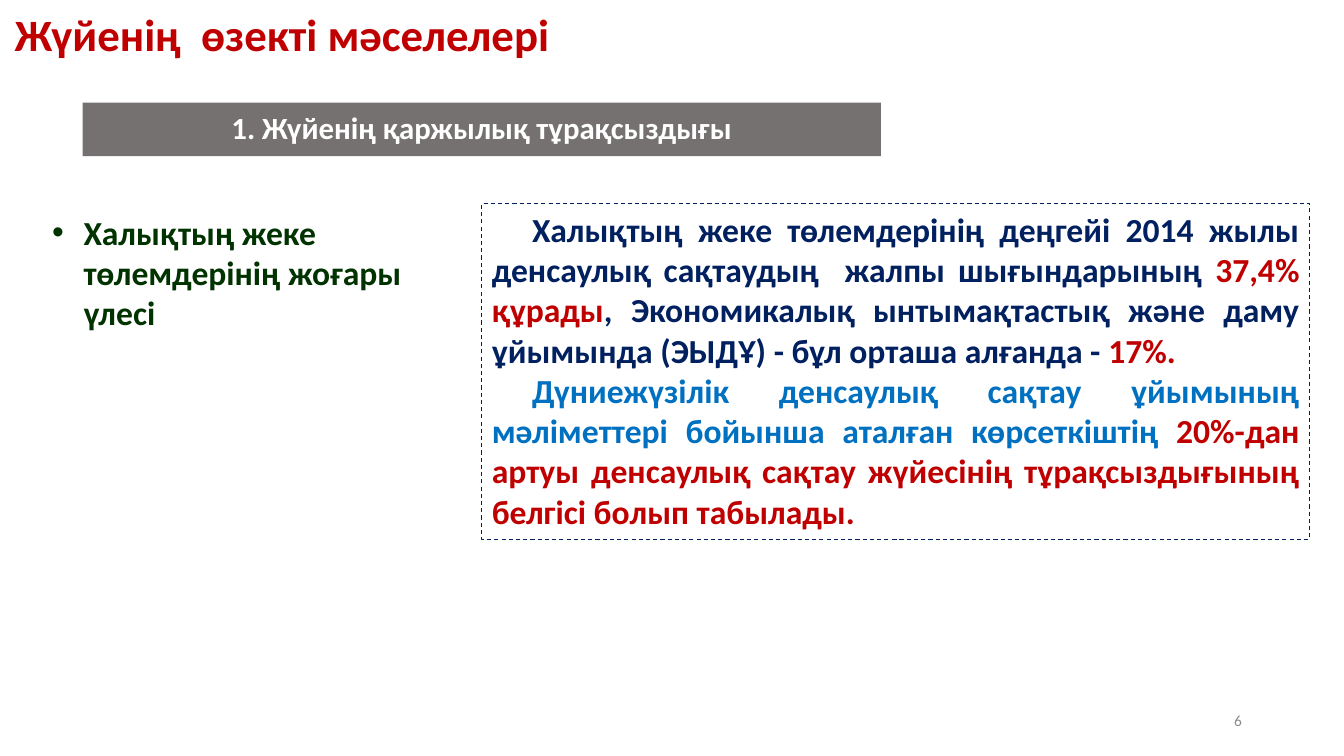
from lxml import etree
from pptx import Presentation
from pptx.dml.color import RGBColor
from pptx.enum import dml, shapes, text
from pptx.oxml.ns import qn
from pptx.util import Pt

RED, NAVY, BLUE, GREEN = "C00000", "002060", "0070C0", "003300"
WHITE, GREY, PALE_GREY = "FFFFFF", "767171", "8C8C8C"
ALIGN, ANCHOR = text.PP_ALIGN, text.MSO_ANCHOR


def rgb(value):
    return RGBColor.from_string(value)


def write(sp, paragraphs, size, bold=True, frame=None, para=None, margin=0, indent=0):
    """Fill a shape with paragraphs, each a list of (text, colour) runs."""
    tf = sp.text_frame
    tf.word_wrap = True
    for name, value in (frame or {}).items():
        setattr(tf, name, value)
    for i, runs in enumerate(paragraphs):
        p = tf.paragraphs[0] if i == 0 else tf.add_paragraph()
        for name, value in (para or {}).items():
            setattr(p, name, value)
        pPr = p._p.get_or_add_pPr()
        pPr.set("marL", str(Pt(margin)))
        pPr.set("indent", str(Pt(indent)))
        for words, colour in runs:
            r = p.add_run()
            r.text = words
            for name, value in {"name": "Calibri", "size": Pt(size), "bold": bold}.items():
                setattr(r.font, name, value)
            r.font.color.rgb = rgb(colour)


prs = Presentation()
prs.slide_width, prs.slide_height = Pt(960), Pt(540)
s = prs.slides.add_slide(prs.slide_layouts[6])

# Bulleted issue on the left
issue = s.shapes.add_textbox(Pt(30.2), Pt(147.6), Pt(297.4), Pt(94.3))
write(issue, [[("Халықтың жеке төлемдерінің жоғары үлесі", GREEN)]], 24,
      margin=22.5, indent=-22.5)
pPr = issue.text_frame.paragraphs[0]._p.pPr
etree.SubElement(pPr, qn("a:buFont")).set("typeface", "Arial")
etree.SubElement(pPr, qn("a:buChar")).set("char", "•")

# Dashed box with the figures
figures = s.shapes.add_shape(shapes.MSO_SHAPE.RECTANGLE,
                             Pt(344.2), Pt(145.4), Pt(591.1), Pt(239.8))
figures.shadow.inherit = False
figures.fill.background()
figures.line.color.rgb = rgb(NAVY)
figures.line.width = Pt(0.75)
figures.line.dash_style = dml.MSO_LINE.DASH
write(figures, [
    [("Халықтың жеке төлемдерінің деңгейі 2014 жылы денсаулық сақтаудың  жалпы шығындарының ", NAVY),
     ("37,4% құрады", RED),
     (", Экономикалық ынтымақтастық және даму ұйымында (ЭЫДҰ) - бұл орташа алғанда - ", NAVY),
     ("17%. ", RED)],
    [("Дүниежүзілік денсаулық сақтау ұйымының мәліметтері бойынша аталған көрсеткіштің", BLUE),
     (" 20%-дан артуы денсаулық сақтау жүйесінің тұрақсыздығының белгісі болып табылады.", RED)],
], 24, frame={"vertical_anchor": ANCHOR.TOP}, para={"alignment": ALIGN.JUSTIFY}, indent=28.8)

# Section banner
banner = s.shapes.add_shape(shapes.MSO_SHAPE.RECTANGLE, Pt(59), Pt(73.4), Pt(570.2), Pt(38.2))
banner.shadow.inherit = False
banner.fill.solid()
banner.fill.fore_color.rgb = rgb(GREY)
banner.line.fill.background()
write(banner, [[("1. Жүйенің қаржылық тұрақсыздығы", WHITE)]], 22,
      frame={"vertical_anchor": ANCHOR.MIDDLE, "margin_left": Pt(21), "margin_right": Pt(21),
             "margin_top": 0, "margin_bottom": 0},
      para={"alignment": ALIGN.CENTER, "line_spacing": 0.9})

# Title and page number
title = s.shapes.add_textbox(Pt(3.6), Pt(-1.4), Pt(748), Pt(55.4))
write(title, [[("Жүйенің  өзекті мәселелері", RED)]], 32,
      frame={"vertical_anchor": ANCHOR.MIDDLE}, para={"line_spacing": 0.9})

number = s.shapes.add_textbox(Pt(678.2), Pt(500.4), Pt(216), Pt(28.8))
write(number, [[("6", PALE_GREY)]], 11, bold=False,
      frame={"vertical_anchor": ANCHOR.MIDDLE}, para={"alignment": ALIGN.RIGHT})

prs.save("out.pptx")
